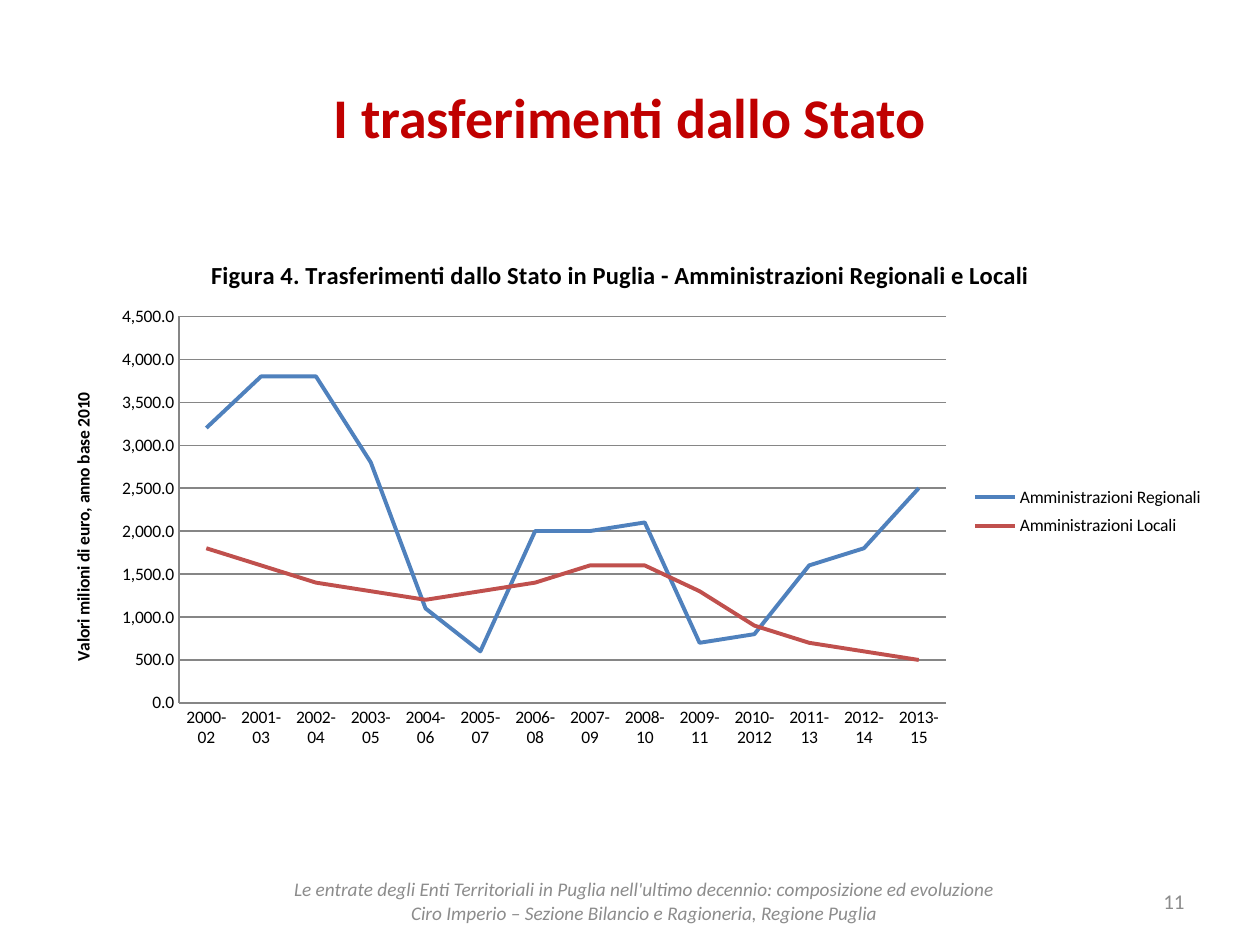
"""Build the slide on State transfers to Puglia with its line chart."""
import lxml.etree
import pptx
import pptx.chart.data
import pptx.dml.color
import pptx.enum.chart
import pptx.enum.text
import pptx.oxml.ns
import pptx.util

Inches = pptx.util.Inches
Pt = pptx.util.Pt
ALIGN = pptx.enum.text.PP_ALIGN
qn = pptx.oxml.ns.qn


def color(hex_string):
    return pptx.dml.color.RGBColor.from_string(hex_string)


def write(frame, text, size, fill="000000", bold=False, italic=False, align=ALIGN.CENTER):
    frame.text = text
    for paragraph in frame.paragraphs:
        paragraph.alignment = align
        for run in paragraph.runs:
            run.font.name = "Calibri"
            run.font.size = Pt(size)
            run.font.bold = bold
            run.font.italic = italic
            run.font.color.rgb = color(fill)


deck = pptx.Presentation()
deck.slide_width, deck.slide_height = Inches(10), Inches(7.5)
slide = deck.slides.add_slide(deck.slide_layouts[5])

title = slide.shapes.title
title.left, title.top, title.width, title.height = (Inches(v) for v in (0.5, 0.3, 9, 1.25))
title.text_frame.vertical_anchor = pptx.enum.text.MSO_ANCHOR.MIDDLE
write(title.text_frame, "I trasferimenti dallo Stato", 32, fill="C00000", bold=True)

periods = ["2000-02", "2001-03", "2002-04", "2003-05", "2004-06", "2005-07", "2006-08",
           "2007-09", "2008-10", "2009-11", "2010-2012", "2011-13", "2012-14", "2013-15"]
transfers = {
    "Amministrazioni Regionali": ("4F81BD", [3200, 3800, 3800, 2800, 1100, 600, 2000,
                                             2000, 2100, 700, 800, 1600, 1800, 2500]),
    "Amministrazioni Locali": ("C0504D", [1800, 1600, 1400, 1300, 1200, 1300, 1400,
                                          1600, 1600, 1300, 900, 700, 600, 500]),
}
chart_data = pptx.chart.data.CategoryChartData(number_format="#,##0.0")
chart_data.categories = periods
for administration, (_, amounts) in transfers.items():
    chart_data.add_series(administration, amounts)

chart_left, chart_top, chart_width, chart_height = 0.34, 1.87, 9.31, 4.14
chart = slide.shapes.add_chart(
    pptx.enum.chart.XL_CHART_TYPE.LINE, Inches(chart_left), Inches(chart_top),
    Inches(chart_width), Inches(chart_height), chart_data).chart
chart.font.name = "Calibri"
chart.font.size = Pt(10)
chart.font.color.rgb = color("000000")
chart.has_title = True
write(chart.chart_title.text_frame,
      "Figura 4. Trasferimenti dallo Stato in Puglia - Amministrazioni Regionali e Locali",
      14, bold=True)
chart.chart_title.include_in_layout = False
chart.has_legend = True
chart.legend.position = pptx.enum.chart.XL_LEGEND_POSITION.RIGHT
chart.legend.include_in_layout = False

plot = chart.plots[0]
plot.vary_by_categories = False
for series, (line_color, _) in zip(plot.series, transfers.values()):
    series.smooth = False
    series.marker.style = pptx.enum.chart.XL_MARKER_STYLE.NONE
    series.format.line.width = Pt(2.25)
    series.format.line.color.rgb = color(line_color)

amount_axis = chart.value_axis
amount_axis.minimum_scale = 0
amount_axis.maximum_scale = 4500
amount_axis.major_unit = 500
amount_axis.has_major_gridlines = True
amount_axis.tick_labels.number_format = "#,##0.0"
amount_axis.tick_labels.number_format_is_linked = False
amount_axis.has_title = True
write(amount_axis.axis_title.text_frame, "Valori milioni di euro, anno base 2010", 10, bold=True)
for axis in (amount_axis, chart.category_axis):
    axis.major_tick_mark = pptx.enum.chart.XL_TICK_MARK.NONE
    axis.minor_tick_mark = pptx.enum.chart.XL_TICK_MARK.NONE
for rule in (amount_axis, chart.category_axis, amount_axis.major_gridlines):
    rule.format.line.width = Pt(0.75)
    rule.format.line.color.rgb = color("868686")

chart_parts = [
    ("c:title", 1.64, 2.01, None, None),
    ("c:plotArea", 1.42, 2.51, 6.09, 3.07),
    ("c:legend", 7.7, 3.8, 1.87, 0.52),
]
for tag, left, top, width, height in chart_parts:
    part = chart.element.find(qn("c:chart")).find(qn(tag))
    for automatic in part.findall(qn("c:layout")):
        part.remove(automatic)
    layout = lxml.etree.Element(qn("c:layout"))
    manual = lxml.etree.SubElement(layout, qn("c:manualLayout"))
    settings = [("xMode", "edge"), ("yMode", "edge"),
                ("x", (left - chart_left) / chart_width),
                ("y", (top - chart_top) / chart_height)]
    if tag == "c:plotArea":
        settings.insert(0, ("layoutTarget", "inner"))
    if width:
        settings += [("w", width / chart_width), ("h", height / chart_height)]
    for name, value in settings:
        lxml.etree.SubElement(manual, qn("c:" + name)).set("val", str(value))
    overlay = part.find(qn("c:overlay"))
    part.insert(0 if overlay is None else part.index(overlay), layout)

footer_text = ("Le entrate degli Enti Territoriali in Puglia nell'ultimo decennio: "
               "composizione ed evoluzione\n"
               "Ciro Imperio – Sezione Bilancio e Ragioneria, Regione Puglia")
footers = [
    (7.17, 2.33, "11", dict(size=12, align=ALIGN.RIGHT)),
    (1.25, 7.73, footer_text, dict(size=11, italic=True)),
]
for left, width, text, style in footers:
    footer = slide.shapes.add_textbox(Inches(left), Inches(6.95), Inches(width), Inches(0.4))
    footer.text_frame.word_wrap = True
    footer.text_frame.vertical_anchor = pptx.enum.text.MSO_ANCHOR.MIDDLE
    write(footer.text_frame, text, fill="8C8C8C", **style)

deck.save("out.pptx")
